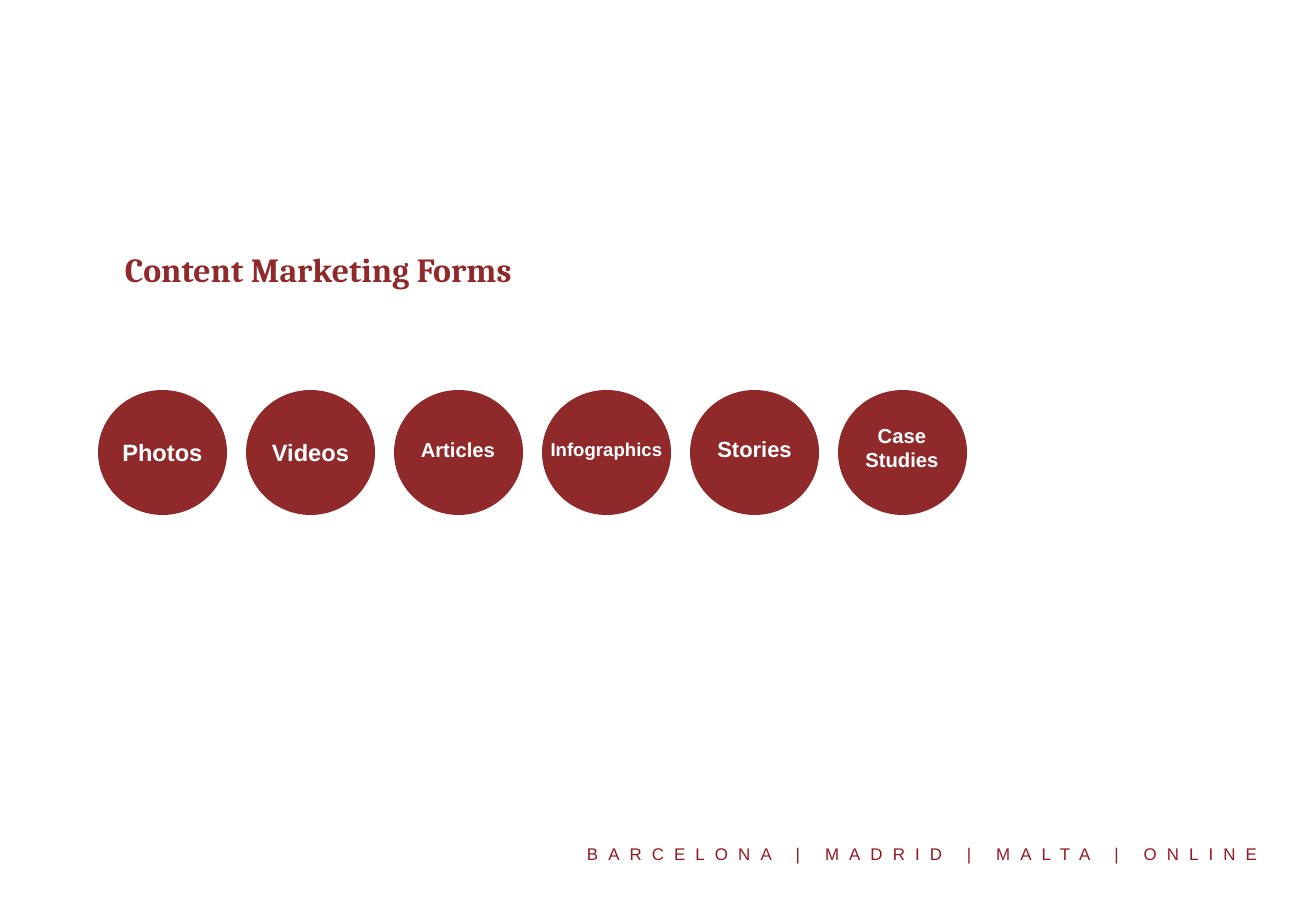
from pptx import Presentation
from pptx.dml.color import RGBColor
from pptx.enum.shapes import MSO_SHAPE
from pptx.enum.text import MSO_ANCHOR, MSO_AUTO_SIZE, PP_ALIGN
from pptx.util import Emu, Pt

EMU_PER_INCH = 914400
PX_PER_INCH = 121.5
BURGUNDY = RGBColor(0x90, 0x29, 0x2A)
CRIMSON = RGBColor(0x92, 0x18, 0x24)
WHITE = RGBColor(0xFF, 0xFF, 0xFF)

CIRCLE_LEFT, CIRCLE_TOP = 98, 390
CIRCLE_WIDTH, CIRCLE_HEIGHT = 129, 125
CIRCLE_PITCH = 148

CONTENT_FORMS = [
    ("Photos", 14, 432, 111, 41),
    ("Videos", 14, 432, 113, 41),
    ("Articles", 12, 431, 102, 36),
    ("Infographics", 11, 432, 143, 35),
    ("Stories", 13, 430, 143, 39),
    ("Case Studies", 12, 417, 102, 61),
]


def px(value):
    return Emu(round(value * EMU_PER_INCH / PX_PER_INCH))


class SlideBuilder:
    def __init__(self, slide):
        self.slide = slide
        self.body_font = "Arial"
        self.title_font = "Cambria"

    def circle(self, left, top, width, height):
        shape = self.slide.shapes.add_shape(
            MSO_SHAPE.OVAL, px(left), px(top), px(width), px(height))
        shape.shadow.inherit = False
        shape.fill.solid()
        shape.fill.fore_color.rgb = BURGUNDY
        shape.line.fill.background()

    def text(self, content, left, top, width, height, size, color, font=None,
             bold=True, align=PP_ALIGN.LEFT, wrap=True, grow=True, spacing=0):
        box = self.slide.shapes.add_textbox(px(left), px(top), px(width), px(height))
        frame = box.text_frame
        frame.word_wrap = wrap
        frame.vertical_anchor = MSO_ANCHOR.TOP
        frame.auto_size = MSO_AUTO_SIZE.SHAPE_TO_FIT_TEXT if grow else MSO_AUTO_SIZE.NONE
        paragraph = frame.paragraphs[0]
        paragraph.alignment = align
        run = paragraph.add_run()
        run.text = content
        run.font.name = font or self.body_font
        run.font.size = Pt(size)
        run.font.bold = bold
        run.font.color.rgb = color
        if spacing:
            run.font._element.set("spc", str(spacing * 100))

    def title(self, content):
        self.text(content, 113, 243, 987, 89, 20, BURGUNDY,
                  font=self.title_font, grow=False)

    def footer(self, content):
        self.text(content, 575, 838, 716, 33, 10, CRIMSON,
                  bold=False, wrap=False, spacing=6)

    def label(self, content, center, top, width, height, size):
        self.text(content, center - width // 2, top, width, height, size, WHITE,
                  align=PP_ALIGN.CENTER)


def main():
    presentation = Presentation()
    presentation.slide_width = px(1316)
    presentation.slide_height = px(911)
    builder = SlideBuilder(presentation.slides.add_slide(presentation.slide_layouts[6]))

    builder.footer("BARCELONA | MADRID | MALTA | ONLINE")
    builder.title("Content Marketing Forms")
    for index, (name, size, top, width, height) in enumerate(CONTENT_FORMS):
        left = CIRCLE_LEFT + index * CIRCLE_PITCH
        builder.circle(left, CIRCLE_TOP, CIRCLE_WIDTH, CIRCLE_HEIGHT)
        builder.label(name, left + CIRCLE_WIDTH // 2, top, width, height, size)

    presentation.save("out.pptx")


if __name__ == "__main__":
    main()
